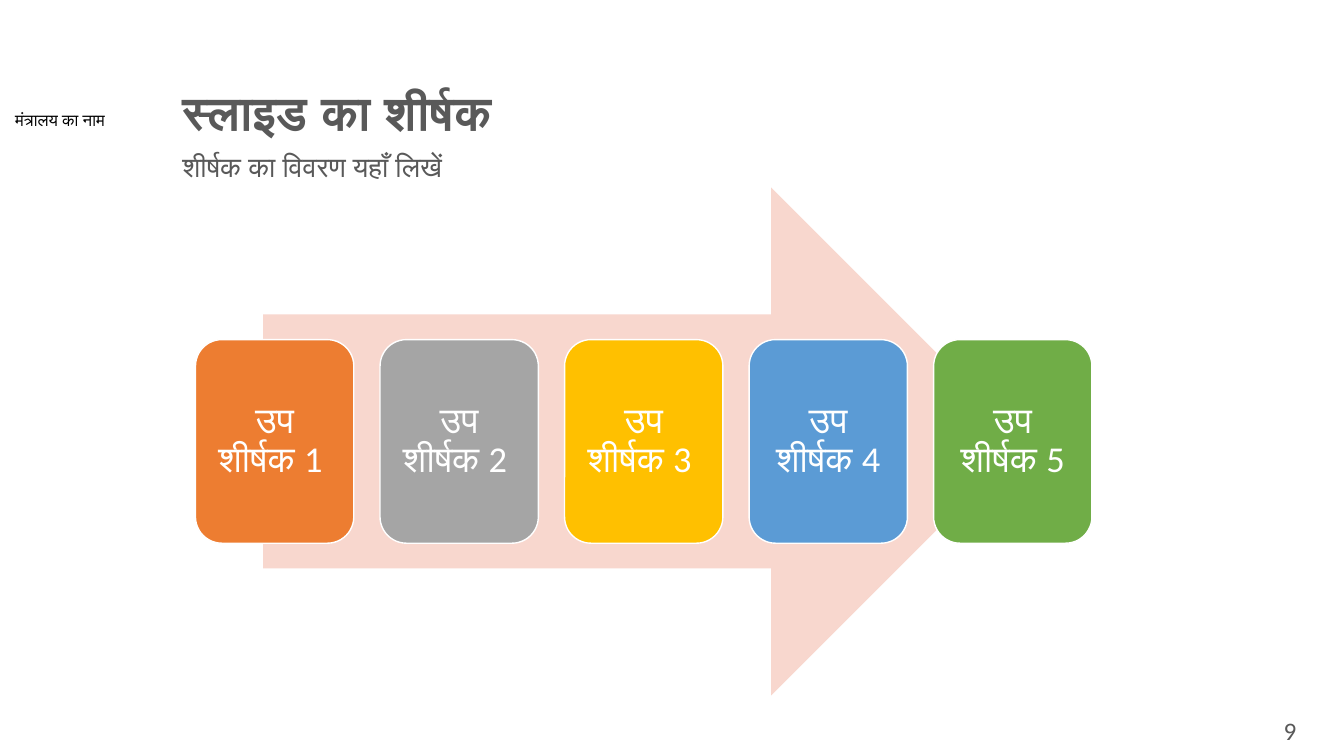
"""Build a slide with five subtitle cards over a wide arrow."""
from pptx import Presentation
from pptx import util as u
from pptx.dml.color import RGBColor
from pptx.enum import shapes, text

COLORS = {
    "black": "000000",
    "gray": "595959",
    "white": "FFFFFF",
    "arrow": "F8D7CE",
}
CARDS = {
    "उप शीर्षक 1 ": "ED7D31",
    "उप शीर्षक 2 ": "A5A5A5",
    "उप शीर्षक 3 ": "FFC000",
    "उप शीर्षक 4": "5B9BD5",
    "उप शीर्षक 5": "70AD47",
}
WIDTH, HEIGHT = u.Inches(13.33), u.Inches(7.5)
COLUMN, ROW = WIDTH / 100, HEIGHT / 100
CARD_LEFT, CARD_STEP = 14.55, 13.73


def place(left, top, width, height):
    return (round(left * COLUMN), round(top * ROW),
            round(width * COLUMN), round(height * ROW))


def write(frame, words, size, color, bold=False, align=None, spacing=None):
    frame.word_wrap = True
    para = frame.paragraphs[0]
    para.text = words
    para.alignment = align
    para.line_spacing = spacing
    font = para.font
    font.name, font.size, font.bold = "Calibri", u.Pt(size), bold
    font.color.rgb = RGBColor.from_string(color)


def add_label(page, area, words, size, color, **style):
    box = page.shapes.add_textbox(*place(*area))
    write(box.text_frame, words, size, color, **style)


def add_solid(page, kind, area, color):
    shape = page.shapes.add_shape(kind, *place(*area))
    shape.shadow.inherit = False
    shape.fill.solid()
    shape.fill.fore_color.rgb = RGBColor.from_string(color)
    shape.line.fill.background()
    return shape


def add_card(page, index, words, color):
    area = (CARD_LEFT + index * CARD_STEP, 44.93, 11.78, 26.93)
    card = add_solid(page, shapes.MSO_SHAPE.ROUNDED_RECTANGLE, area, color)
    card.line.color.rgb = RGBColor.from_string(COLORS["white"])
    card.line.width = u.Pt(1)
    frame = card.text_frame
    frame.margin_left = frame.margin_right = u.Inches(0.11)
    frame.margin_top = frame.margin_bottom = u.Inches(0.11)
    frame.vertical_anchor = text.MSO_ANCHOR.MIDDLE
    write(frame, words, 26, COLORS["white"],
          align=text.PP_ALIGN.CENTER, spacing=0.9)


def main():
    deck = Presentation()
    deck.slide_width, deck.slide_height = WIDTH, HEIGHT
    page = deck.slides.add_slide(deck.slide_layouts[6])

    add_label(page, (0.38, 13.87, 11.4, 4), "मंत्रालय का नाम", 12, COLORS["black"])
    add_label(page, (12.83, 11.2, 72.1, 7.33), "स्लाइड का शीर्षक", 34,
              COLORS["gray"], bold=True, spacing=0.9)
    add_label(page, (12.83, 19.6, 72.1, 8.4), "शीर्षक का विवरण यहाँ लिखें", 20,
              COLORS["gray"], spacing=0.9)

    add_solid(page, shapes.MSO_SHAPE.RIGHT_ARROW, (19.58, 24.8, 56.7, 67.2),
              COLORS["arrow"])
    for index, (words, color) in enumerate(CARDS.items()):
        add_card(page, index, words, color)

    add_label(page, (91.95, 94, 8.05, 6), "9", 18, COLORS["gray"],
              align=text.PP_ALIGN.CENTER)
    deck.save("out.pptx")


if __name__ == "__main__":
    main()
